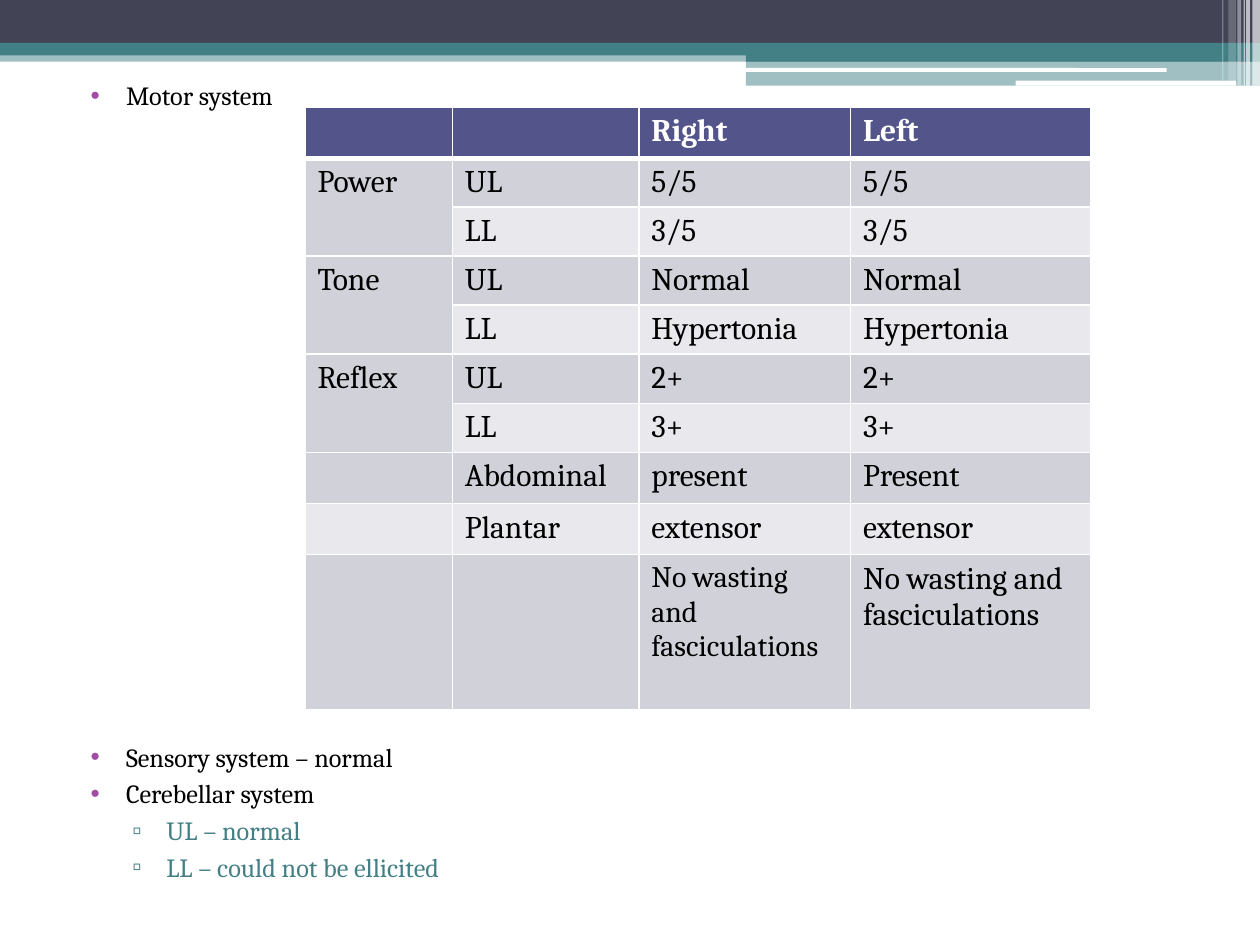
from dataclasses import dataclass

import lxml.etree
import pptx
import pptx.dml.color
import pptx.enum.shapes
import pptx.enum.text
import pptx.oxml
import pptx.oxml.ns
import pptx.util

COLUMNS, ROWS = 100, 75
UNIT = pptx.util.Inches(0.1)
FONT = "Cambria"
WHITE, BLACK, TEAL, SLATE = "FFFFFF", "000000", "438086", "424456"
PURPLE, INDIGO, DARK_BAND, LIGHT_BAND = "A04DA3", "53548A", "D1D1DA", "E9E9ED"


@dataclass
class Bar:
    column: float
    row: float
    columns: float
    rows: float
    color: str
    opacity: int = 100
    rounded: bool = False


@dataclass
class Bullet:
    text: str
    level: int = 0
    before: float = 3


@dataclass
class BulletStyle:
    margin: float
    hanging: float
    mark: str
    mark_color: str
    text_color: str


BARS = [
    Bar(0, 4, 100, 0.9, TEAL, 50),
    Bar(0, 0, 100, 3.4, SLATE),
    Bar(0, 3.4, 100, 1, TEAL),
    Bar(59.2, 3.9, 40.8, 1, TEAL),
    Bar(59.2, 4.8, 40.8, 2, TEAL, 50),
    Bar(59.1, 5.4, 33.5, 0.3, WHITE, rounded=True),
    Bar(80.6, 6.4, 17.5, 0.4, WHITE, rounded=True),
    Bar(99.4, 0, 0.6, 6.8, WHITE, 65),
    Bar(98.9, 0, 0.3, 6.8, WHITE, 65),
    Bar(98.7, 0, 0.1, 6.8, WHITE, 60),
    Bar(98.2, 0, 0.3, 6.8, WHITE, 40),
    Bar(97.5, 0, 0.6, 6.4, WHITE, 20),
    Bar(97, 0, 0.1, 6.4, WHITE, 30),
]

TABLE_CLEARANCE = 360
FINDINGS = [
    Bullet("Motor system"),
    Bullet("Sensory system – normal", before=TABLE_CLEARANCE),
    Bullet("Cerebellar system"),
    Bullet("UL – normal", 1),
    Bullet("LL – could not be ellicited", 1),
]
BULLET_STYLES = [
    BulletStyle(4, 2.8, "•", PURPLE, BLACK),
    BulletStyle(7.2, 2.7, "▫", TEAL, TEAL),
]

MOTOR_EXAM = [
    ("", "", "Right", "Left"),
    ("Power", "UL", "5/5", "5/5"),
    ("", "LL", "3/5", "3/5"),
    ("Tone", "UL", "Normal", "Normal"),
    ("", "LL", "Hypertonia", "Hypertonia"),
    ("Reflex", "UL", "2+", "2+"),
    ("", "LL", "3+", "3+"),
    ("", "Abdominal", "present", "Present"),
    ("", "Plantar", "extensor", "extensor"),
    ("", "", "No wasting and fasciculations", "No wasting and fasciculations"),
]
EXAM_COLUMNS = (11.7, 14.8, 16.8, 19.1)
EXAM_ROWS = (3.89,) * 9 + (12.35,)
SMALLER_NOTE = (9, 2)


def grid(count: float) -> int:
    return round(count * UNIT)


def rgb(color: str) -> pptx.dml.color.RGBColor:
    return pptx.dml.color.RGBColor.from_string(color)


def paint(fill, color: str) -> None:
    fill.solid()
    fill.fore_color.rgb = rgb(color)


def child(parent, tag: str, **attributes: str):
    return lxml.etree.SubElement(parent, pptx.oxml.ns.qn(tag), **attributes)


def write(paragraph, text: str, *, size: float, color: str, bold: bool = False) -> None:
    run = paragraph.add_run()
    run.text = text
    run.font.name = FONT
    run.font.size = pptx.util.Pt(size)
    run.font.bold = bold
    run.font.color.rgb = rgb(color)


def draw_bar(slide, bar: Bar) -> None:
    kinds = pptx.enum.shapes.MSO_SHAPE
    kind = kinds.ROUNDED_RECTANGLE if bar.rounded else kinds.RECTANGLE
    band = slide.shapes.add_shape(
        kind, grid(bar.column), grid(bar.row), grid(bar.columns), grid(bar.rows))
    band.shadow.inherit = False
    band.line.fill.background()
    paint(band.fill, bar.color)
    if bar.opacity < 100:
        tint = band.fill._xPr.find(".//" + pptx.oxml.ns.qn("a:srgbClr"))
        child(tint, "a:alpha", val=str(bar.opacity * 1000))


def write_bullet(paragraph, bullet: Bullet) -> None:
    style = BULLET_STYLES[bullet.level]
    paragraph.level = bullet.level
    paragraph.space_before = pptx.util.Pt(bullet.before)
    paragraph.space_after = pptx.util.Pt(0)
    properties = paragraph._p.get_or_add_pPr()
    properties.set("marL", str(grid(style.margin)))
    properties.set("indent", str(-grid(style.hanging)))
    child(child(properties, "a:buClr"), "a:srgbClr", val=style.mark_color)
    child(properties, "a:buFont", typeface="Arial")
    child(properties, "a:buChar", char=style.mark)
    write(paragraph, bullet.text, size=15, color=style.text_color)


def write_findings(body) -> None:
    body.left, body.top, body.width, body.height = map(grid, (5, 5.8, 90, 66.1))
    frame = body.text_frame
    frame.auto_size = pptx.enum.text.MSO_AUTO_SIZE.NONE
    frame.vertical_anchor = pptx.enum.text.MSO_ANCHOR.TOP
    for index, finding in enumerate(FINDINGS):
        write_bullet(frame.add_paragraph() if index else frame.paragraphs[0], finding)


def draw_borders(cell, row: int) -> None:
    widths = {"L": 1, "R": 1, "T": 3 if row == 1 else 1, "B": 3 if row == 0 else 1}
    properties = cell._tc.get_or_add_tcPr()
    for side, width in widths.items():
        edge = child(properties, f"a:ln{side}", w=str(pptx.util.Pt(width)))
        child(child(edge, "a:solidFill"), "a:srgbClr", val=WHITE)


def draw_exam(slide) -> None:
    exam = slide.shapes.add_table(
        len(EXAM_ROWS), len(EXAM_COLUMNS), grid(24.2), grid(8.5),
        grid(sum(EXAM_COLUMNS)), grid(sum(EXAM_ROWS))).table
    for column, width in zip(exam.columns, EXAM_COLUMNS):
        column.width = grid(width)
    for row, height in zip(exam.rows, EXAM_ROWS):
        row.height = grid(height)
    for row, values in enumerate(MOTOR_EXAM):
        heading = row == 0
        fill = INDIGO if heading else DARK_BAND if row % 2 else LIGHT_BAND
        for column, value in enumerate(values):
            cell = exam.cell(row, column)
            draw_borders(cell, row)
            paint(cell.fill, fill)
            if value:
                write(cell.text_frame.paragraphs[0], value,
                      size=17 if (row, column) == SMALLER_NOTE else 18,
                      color=WHITE if heading else BLACK, bold=heading)
        if values[0]:
            exam.cell(row, 0).merge(exam.cell(row + 1, 0))


def main() -> None:
    deck = pptx.Presentation()
    deck.slide_width, deck.slide_height = grid(COLUMNS), grid(ROWS)
    slide = deck.slides.add_slide(deck.slide_layouts[1])
    heading = slide.shapes.title._element
    heading.getparent().remove(heading)
    for bar in BARS:
        draw_bar(slide, bar)
    write_findings(slide.placeholders[1])
    draw_exam(slide)
    deck.save("out.pptx")


if __name__ == "__main__":
    main()
